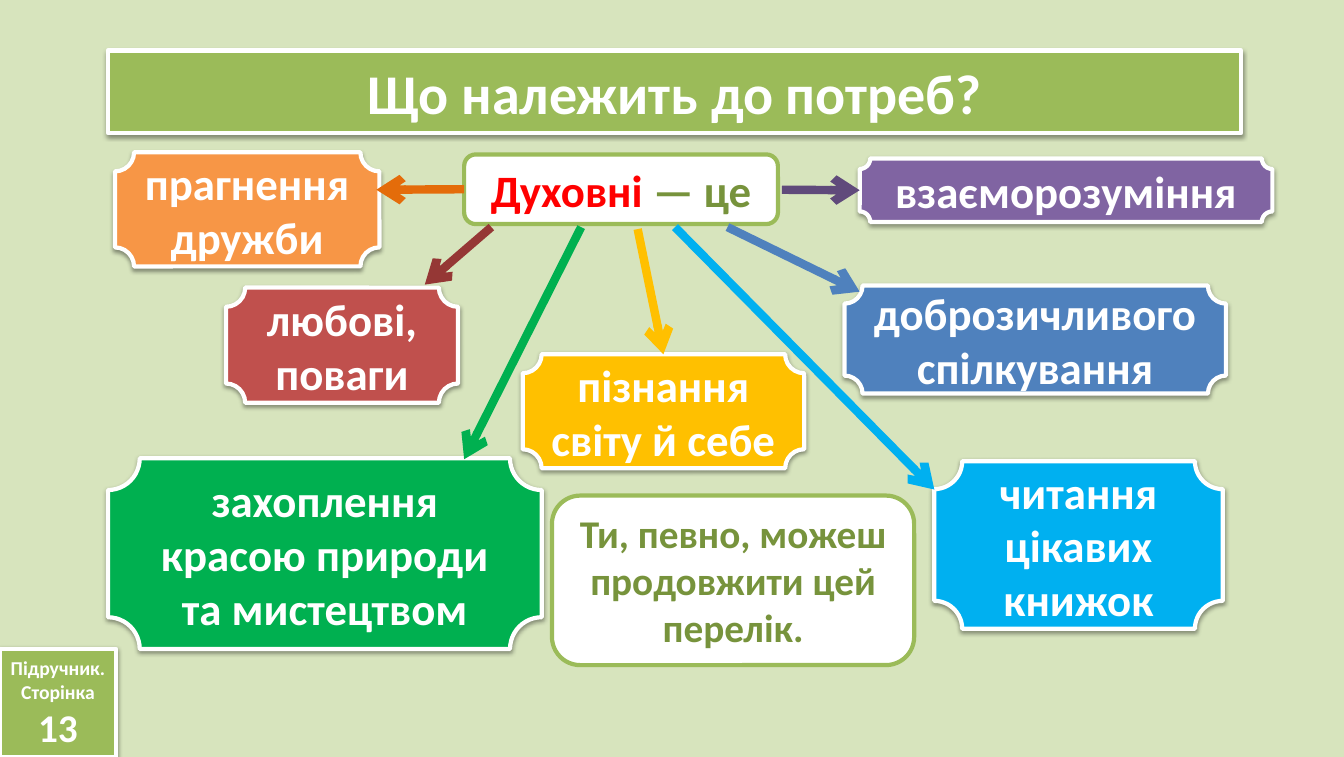
from dataclasses import dataclass

from lxml.etree import SubElement
from pptx import Presentation
from pptx.dml.color import RGBColor
from pptx.enum.shapes import MSO_CONNECTOR as Connector, MSO_SHAPE as Preset
from pptx.enum.text import MSO_ANCHOR as Anchor, MSO_AUTO_SIZE as AutoSize, PP_ALIGN as Align
from pptx.oxml import parse_xml
from pptx.oxml.ns import nsdecls, qn
from pptx.util import Inches, Pt

COLUMNS, ROWS = 133.2, 75
CELL = Inches(0.1)
TOP, LEFT = 0, 1


@dataclass(frozen=True)
class Theme:
    font: str = "Calibri"
    background: str = "D7E4BD"
    white: str = "FFFFFF"
    green: str = "9BBB59"
    dark_green: str = "77933C"
    red: str = "FF0000"
    title_size: int = 40
    need_size: int = 32
    note_size: int = 28
    label_size: int = 14
    outline: int = 3
    arrow: int = 6


THEME = Theme()

NEEDS = {
    "friendship": ("прагнення дружби", "F79646", (11.4, 15.1, 26.2, 11.3)),
    "understanding": ("взаєморозуміння", "8064A2", (85.2, 15.7, 40.9, 6.3)),
    "love": ("любові, поваги", "C0504D", (22.4, 28.5, 23, 11.4)),
    "kindness": ("доброзичливого спілкування", "4F81BD", (83.7, 28.3, 37.8, 10.7)),
    "knowledge": ("пізнання світу й себе", "FFC000", (51.8, 35.1, 27.9, 11.3)),
    "beauty": ("захоплення красою природи та мистецтвом", "00B050", (10.7, 45.4, 43, 18.9)),
    "reading": ("читання цікавих книжок", "00B0F0", (92.6, 45.7, 28.6, 16.6)),
}

ARROWS = {
    "love": ("953735", (48.7, 22.5), (42.1, 28.2)),
    "friendship": ("E46C0A", (46, 18.7), (37.3, 18.8)),
    "understanding": ("604A7B", (77.5, 18.8), (85.2, 18.8)),
    "kindness": ("4F81BD", (72.1, 22.5), (85.2, 28.9)),
    "knowledge": ("FFC000", (63.2, 22.7), (65.8, 35.1)),
    "beauty": ("00B050", (57.6, 22.5), (46, 45.5)),
    "reading": ("00B0F0", (66.9, 22.5), (92.6, 48.5)),
}


def cells(*counts):
    return [round(count * CELL) for count in counts]


def color(value):
    return RGBColor.from_string(value)


def format_run(run, size, value):
    run.font.name = THEME.font
    run.font.size = Pt(size)
    run.font.bold = True
    run.font.color.rgb = color(value)


def write(shape, text, size, value):
    frame = shape.text_frame
    frame.text = text
    frame.word_wrap = True
    frame.vertical_anchor = Anchor.MIDDLE
    for paragraph in frame.paragraphs:
        paragraph.alignment = Align.CENTER
        for run in paragraph.runs:
            format_run(run, size, value)


def paint(shape, fill, line):
    shape.fill.solid()
    shape.fill.fore_color.rgb = color(fill)
    shape.line.color.rgb = color(line)
    shape.line.width = Pt(THEME.outline)
    shape.shadow.inherit = False


def add_shadow(shape):
    effects = shape._element.spPr.find(qn("a:effectLst"))
    effects.append(parse_xml(
        f'<a:outerShdw {nsdecls("a")} blurRad="40000" dist="20000" dir="5400000" rotWithShape="0">'
        '<a:srgbClr val="000000"><a:alpha val="38000"/></a:srgbClr></a:outerShdw>'))


def add_title(slide, text, box):
    title = slide.shapes.title
    title.left, title.top, title.width, title.height = cells(*box)
    title._element.spPr.append(parse_xml(
        f'<a:prstGeom {nsdecls("a")} prst="roundRect"><a:avLst/></a:prstGeom>'))
    paint(title, THEME.green, THEME.white)
    add_shadow(title)
    write(title, text, THEME.title_size, THEME.white)
    title.text_frame.auto_size = AutoSize.NONE


def add_solid(slide, preset, text, box, fill, size):
    shape = slide.shapes.add_shape(preset, *cells(*box))
    paint(shape, fill, THEME.white)
    add_shadow(shape)
    write(shape, text, size, THEME.white)
    return shape


def add_framed(slide, text, box, size, value):
    shape = slide.shapes.add_shape(Preset.ROUNDED_RECTANGLE, *cells(*box))
    paint(shape, THEME.white, THEME.green)
    write(shape, text, size, value)
    return shape


def add_arrow(slide, value, start, end):
    arrow = slide.shapes.add_connector(Connector.STRAIGHT, *cells(*start, *end))
    arrow.line.color.rgb = color(value)
    arrow.line.width = Pt(THEME.arrow)
    SubElement(arrow.line._get_or_add_ln(), qn("a:tailEnd"), type="arrow")
    SubElement(arrow._element.spPr, qn("a:effectLst"))
    return arrow


def main():
    presentation = Presentation()
    presentation.slide_width, presentation.slide_height = cells(COLUMNS, ROWS)
    slide = presentation.slides.add_slide(presentation.slide_layouts.get_by_name("Title Only"))
    slide.background.fill.solid()
    slide.background.fill.fore_color.rgb = color(THEME.background)

    add_title(slide, "Що належить до потреб?", (10.7, 5, 112.3, 8.2))

    hub = add_framed(slide, "Духовні ", (46, 15.3, 31.1, 6.9), THEME.need_size, THEME.red)
    ending = hub.text_frame.paragraphs[0].add_run()
    ending.text = "— це"
    format_run(ending, THEME.need_size, THEME.dark_green)

    page = add_solid(slide, Preset.RECTANGLE, "Підручник.\nСторінка\n13",
                     (0, 64.3, 11.5, 10.7), THEME.green, THEME.label_size)
    page.text_frame.paragraphs[-1].runs[0].font.size = Pt(THEME.note_size)

    note = add_framed(slide, "Ти, певно, можеш продовжити цей перелік.",
                      (54.7, 49.1, 35.9, 16.8), THEME.note_size, THEME.dark_green)
    note.text_frame.vertical_anchor = Anchor.TOP
    note.text_frame.auto_size = AutoSize.SHAPE_TO_FIT_TEXT

    plaques = {name: add_solid(slide, Preset.PLAQUE, text, box, fill, THEME.need_size)
               for name, (text, fill, box) in NEEDS.items()}
    arrows = {name: add_arrow(slide, *arrow) for name, arrow in ARROWS.items()}
    arrows["friendship"].begin_connect(hub, LEFT)
    arrows["understanding"].end_connect(plaques["understanding"], LEFT)
    arrows["knowledge"].end_connect(plaques["knowledge"], TOP)

    presentation.save("out.pptx")


if __name__ == "__main__":
    main()
